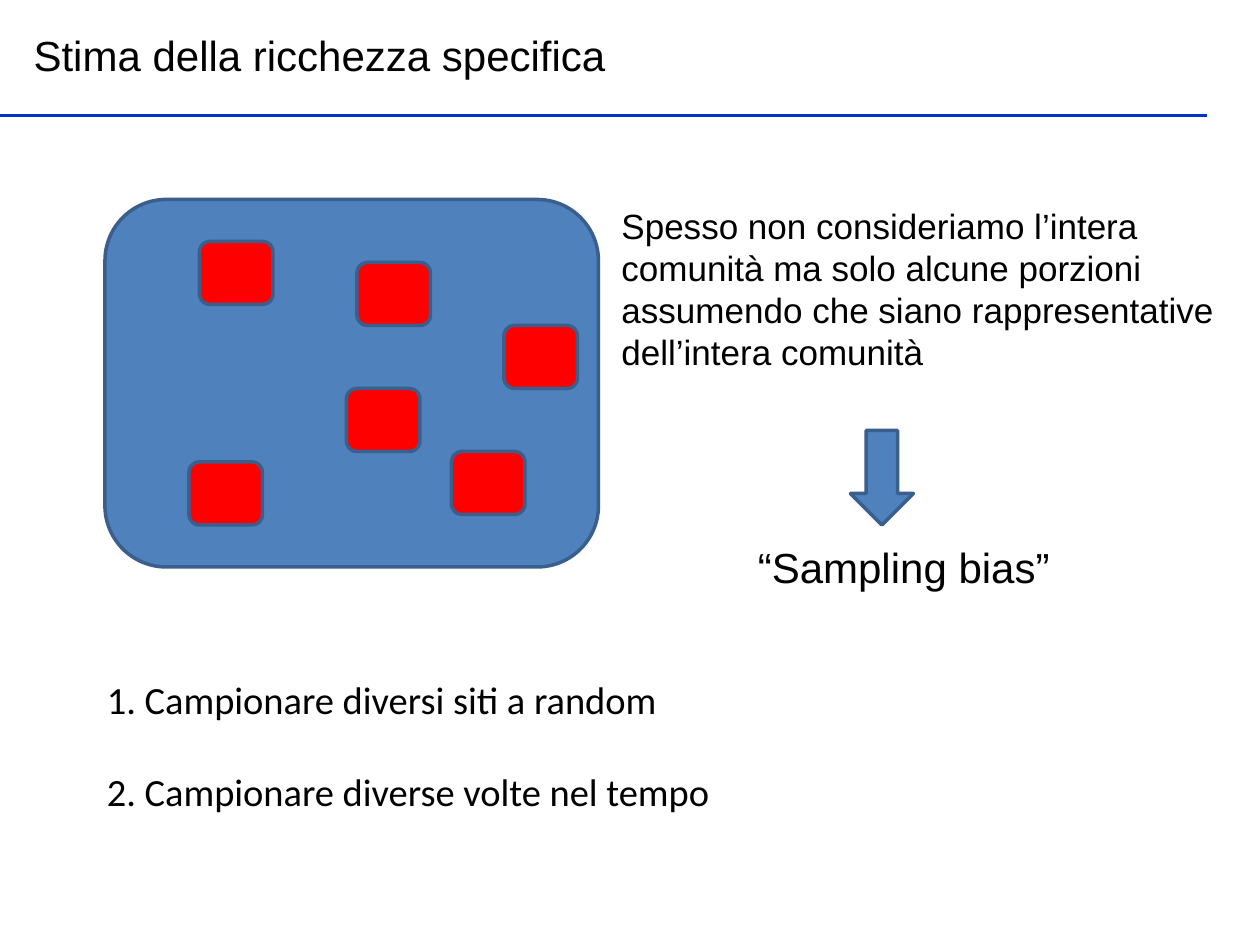
from dataclasses import dataclass

from lxml import etree
from pptx import Presentation
from pptx.dml.color import RGBColor
from pptx.enum.shapes import MSO_CONNECTOR, MSO_SHAPE
from pptx.enum.text import MSO_ANCHOR, PP_ALIGN
from pptx.oxml.ns import qn
from pptx.util import Pt

ROUNDED = MSO_SHAPE.ROUNDED_RECTANGLE
DOWN_ARROW = MSO_SHAPE.DOWN_ARROW
STRAIGHT = MSO_CONNECTOR.STRAIGHT
TOP, MIDDLE = MSO_ANCHOR.TOP, MSO_ANCHOR.MIDDLE
LEFT = PP_ALIGN.LEFT


@dataclass(frozen=True)
class Theme:
    text: str = "000000"
    rule: str = "0332C9"
    community: str = "4F81BD"
    sample: str = "FF0000"
    outline: str = "3A5F8C"
    font: str = "Arial"
    list_font: str = "Calibri"
    heading: int = 24
    body: int = 20
    steps: int = 22
    stroke: int = 2


class SlideBuilder:
    def __init__(self, slide, theme):
        self.slide = slide
        self.theme = theme

    def stroke(self, line, color):
        line.color.rgb = RGBColor.from_string(color)
        line.width = Pt(self.theme.stroke)

    def fill_text(self, sp, paragraphs, size, font=None, anchor=MIDDLE, gap=0):
        tf = sp.text_frame
        frame_format = {
            "word_wrap": True,
            "vertical_anchor": anchor,
            "margin_left": Pt(7.2),
            "margin_right": Pt(7.2),
            "margin_top": Pt(3.6),
            "margin_bottom": Pt(3.6),
        }
        for name, value in frame_format.items():
            setattr(tf, name, value)
        font_format = {"size": Pt(size), "name": font or self.theme.font, "bold": False}
        for i, text in enumerate(paragraphs):
            p = tf.paragraphs[0] if i == 0 else tf.add_paragraph()
            p.alignment = LEFT
            p.space_before = Pt(gap if i else 0)
            r = p.add_run()
            r.text = text
            for name, value in font_format.items():
                setattr(r.font, name, value)
            r.font.color.rgb = RGBColor.from_string(self.theme.text)

    def title(self, text, x, y, w, h):
        sp = self.slide.shapes.title
        box = {"left": x, "top": y, "width": w, "height": h}
        for name, value in box.items():
            setattr(sp, name, Pt(value))
        self.fill_text(sp, [text], self.theme.heading)

    def text(self, paragraphs, x, y, w, h, size, **options):
        sp = self.slide.shapes.add_textbox(Pt(x), Pt(y), Pt(w), Pt(h))
        self.fill_text(sp, paragraphs, size, **options)

    def shape(self, kind, x, y, w, h, color):
        sp = self.slide.shapes.add_shape(kind, Pt(x), Pt(y), Pt(w), Pt(h))
        sp.shadow.inherit = False
        sp.fill.solid()
        sp.fill.fore_color.rgb = RGBColor.from_string(color)
        self.stroke(sp.line, self.theme.outline)

    def rule(self, x1, x2, y):
        line = self.slide.shapes.add_connector(STRAIGHT, Pt(x1), Pt(y), Pt(x2), Pt(y))
        self.stroke(line.line, self.theme.rule)
        etree.SubElement(line._element.spPr, qn("a:effectLst"))


def main():
    theme = Theme()
    prs = Presentation()
    prs.slide_width, prs.slide_height = Pt(720), Pt(540)
    s = SlideBuilder(prs.slides.add_slide(prs.slide_layouts[5]), theme)

    s.rule(0, 690, 66)
    s.title("Stima della ricchezza specifica", 12, 13, 612, 36)

    s.shape(ROUNDED, 60, 114, 282, 210, theme.community)
    samples = [(114, 138), (204, 150), (108, 264), (198, 222), (258, 258), (288, 186)]
    for x, y in samples:
        s.shape(ROUNDED, x, y, 42, 36, theme.sample)

    s.text(
        [
            "Spesso non consideriamo l’intera comunità ma solo alcune porzioni",
            "assumendo che siano rappresentative dell’intera comunità",
        ],
        348, 113, 372, 104, theme.body,
    )
    s.text(["“Sampling bias”"], 426, 306, 186, 36, theme.heading)
    s.shape(DOWN_ARROW, 486, 246, 36, 54, theme.community)
    s.text(
        ["1. Campionare diversi siti a random", "2. Campionare diverse volte nel tempo"],
        54, 383, 360, 87, theme.steps,
        font=theme.list_font, anchor=TOP, gap=26,
    )
    prs.save("out.pptx")


if __name__ == "__main__":
    main()
